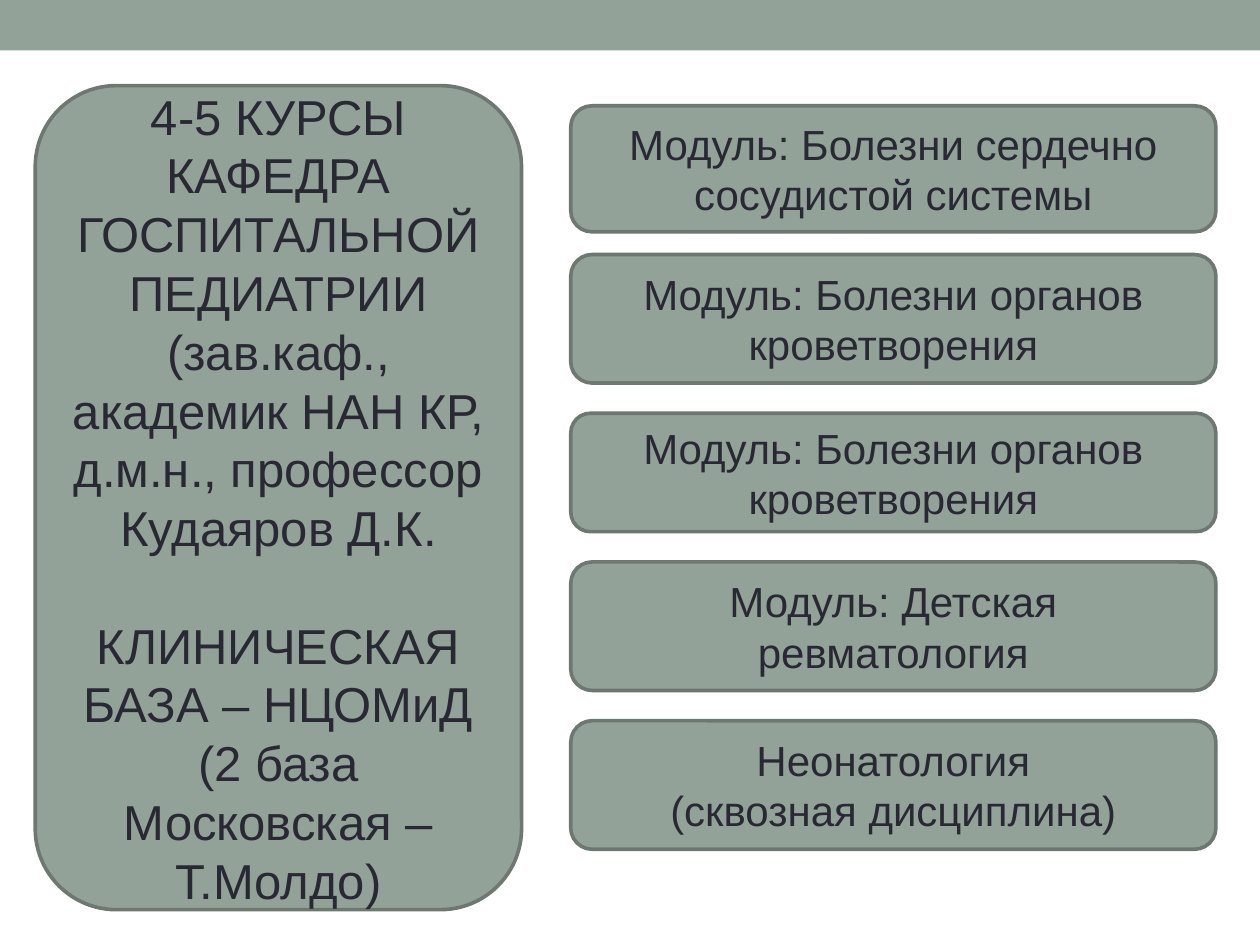
"""Build the slide on the hospital paediatrics department and its modules."""
import dataclasses

import pptx
import pptx.dml.color
import pptx.enum.shapes
import pptx.enum.text
import pptx.util

Inches = pptx.util.Inches
Pt = pptx.util.Pt
Shape = pptx.enum.shapes.MSO_SHAPE


@dataclasses.dataclass(frozen=True)
class Theme:
    sage: str = "93A299"
    border: str = "6D7871"
    ink: str = "292934"
    font: str = "Arial"
    department_size: int = 28
    module_size: int = 24
    border_width: float = 2.08
    leading: float = 1.2


THEME = Theme()

DEPARTMENT = [
    "4-5 КУРСЫ",
    "КАФЕДРА ГОСПИТАЛЬНОЙ ПЕДИАТРИИ",
    "(зав.каф., академик НАН КР, д.м.н., профессор Кудаяров Д.К.",
]
CLINICAL_BASE = [
    "КЛИНИЧЕСКАЯ БАЗА – НЦОМиД",
    "(2 база Московская – Т.Молдо)",
]
MODULES = [
    (0.84, 1.0, ["Модуль: Болезни сердечно сосудистой системы"]),
    (2.02, 1.02, ["Модуль: Болезни органов кроветворения"]),
    (3.28, 0.94, ["Модуль: Болезни органов кроветворения"]),
    (4.46, 1.02, ["Модуль: Детская ревматология"]),
    (5.72, 1.02, ["Неонатология", "(сквозная дисциплина)"]),
]


def apply_format(target, values):
    """Set each named attribute on the target."""
    for name, value in values.items():
        setattr(target, name, value)


def rgb(code):
    """Turn a hex code into a colour."""
    return pptx.dml.color.RGBColor.from_string(code)


def add_panel(slide, kind, left, top, width, height):
    """Add a sage shape without outline or shadow."""
    panel = slide.shapes.add_shape(
        kind, Inches(left), Inches(top), Inches(width), Inches(height)
    )
    panel.shadow.inherit = False
    panel.fill.solid()
    panel.fill.fore_color.rgb = rgb(THEME.sage)
    panel.line.fill.background()
    return panel


def add_paragraph(frame, index, text, size):
    """Write one centred paragraph into a text frame."""
    paragraph = frame.add_paragraph() if index else frame.paragraphs[0]
    apply_format(paragraph, {
        "text": text,
        "alignment": pptx.enum.text.PP_ALIGN.CENTER,
        "line_spacing": Pt(size * THEME.leading),
    })
    font = paragraph.runs[0].font
    apply_format(font, {"name": THEME.font, "size": Pt(size)})
    font.color.rgb = rgb(THEME.ink)
    return paragraph


def add_card(slide, box, lines, size):
    """Add an outlined rounded card and return its paragraphs."""
    card = add_panel(slide, Shape.ROUNDED_RECTANGLE, *box)
    card.line.color.rgb = rgb(THEME.border)
    card.line.width = Pt(THEME.border_width)
    apply_format(card.text_frame, {
        "word_wrap": True,
        "vertical_anchor": pptx.enum.text.MSO_ANCHOR.MIDDLE,
    })
    return [
        add_paragraph(card.text_frame, index, text, size)
        for index, text in enumerate(lines)
    ]


def main():
    """Assemble and save the slide."""
    deck = pptx.Presentation()
    apply_format(deck, {"slide_width": Inches(10), "slide_height": Inches(7.5)})
    slide = deck.slides.add_slide(deck.slide_layouts[6])
    add_panel(slide, Shape.RECTANGLE, 0, 0, 10, 0.4)

    department = add_card(
        slide, (0.28, 0.68, 3.86, 6.54),
        DEPARTMENT + CLINICAL_BASE, THEME.department_size,
    )
    clinical_heading = department[len(DEPARTMENT)]
    clinical_heading.space_before = Pt(THEME.department_size * THEME.leading)

    for top, height, lines in MODULES:
        add_card(slide, (4.53, top, 5.12, height), lines, THEME.module_size)

    deck.save("out.pptx")


if __name__ == "__main__":
    main()
